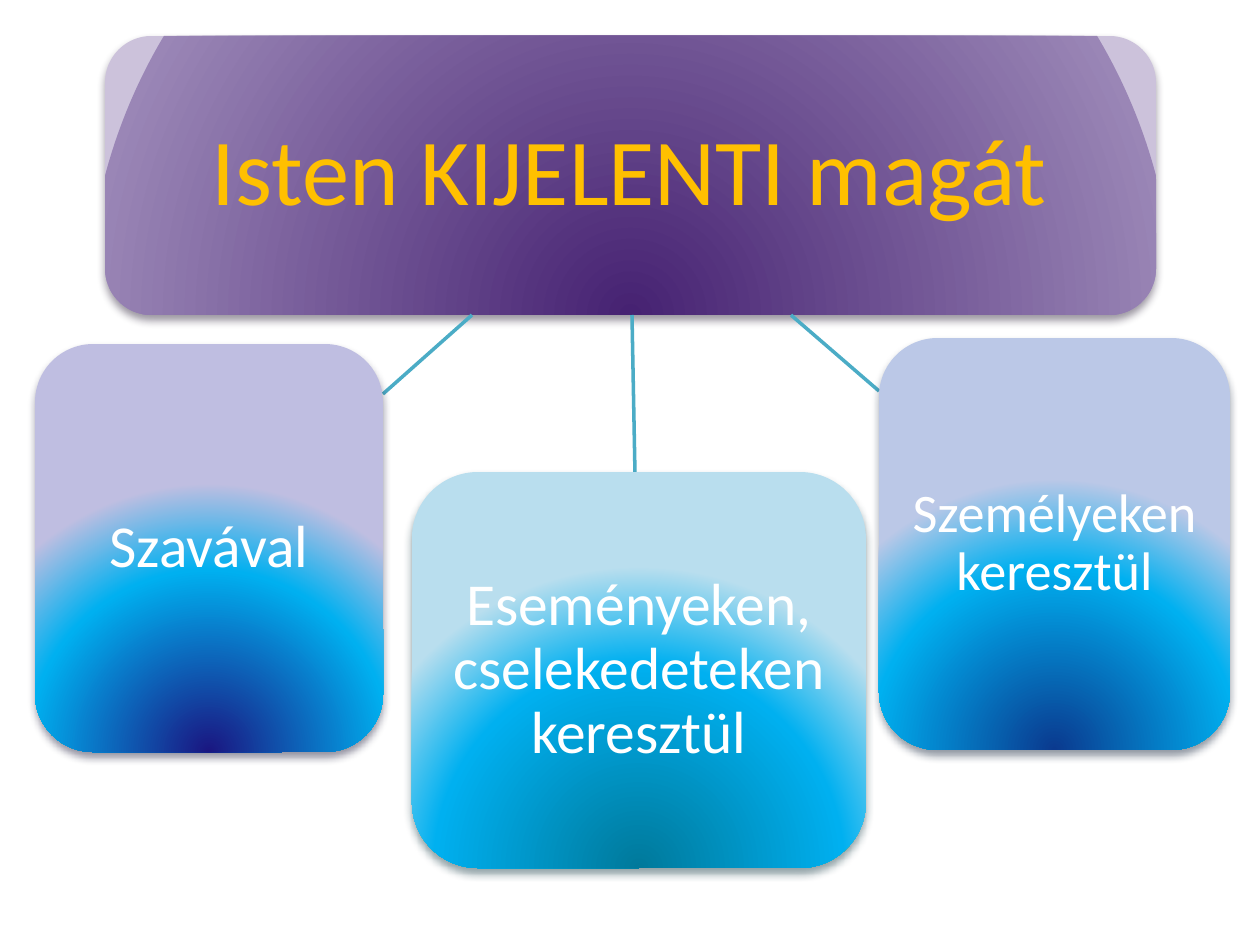
from lxml import etree
from pptx import Presentation, util as u
from pptx.dml.color import RGBColor
from pptx.enum import shapes, text
from pptx.oxml import parse_xml
from pptx.oxml.ns import nsdecls, qn

PX = 914400 / 126
WHITE = RGBColor(0xFF, 0xFF, 0xFF)
GOLD = RGBColor(0xFF, 0xC0, 0x00)
TEAL = RGBColor(0x4B, 0xAC, 0xC6)
SKY = RGBColor(0x00, 0xB0, 0xF0)
PURPLE = RGBColor(0x46, 0x22, 0x72)
MAUVE = RGBColor(0x9A, 0x86, 0xB6)
LILAC = RGBColor(0xCC, 0xC2, 0xDB)
INDIGO = RGBColor(0x1A, 0x16, 0x81)
LAVENDER = RGBColor(0xBF, 0xBE, 0xE1)
NAVY = RGBColor(0x0A, 0x3A, 0x8F)
PERIWINKLE = RGBColor(0xBB, 0xC8, 0xE7)
PETROL = RGBColor(0x00, 0x79, 0x9B)
ICE = RGBColor(0xB9, 0xDE, 0xEE)
BANNER_SHADOW = RGBColor(0x2D, 0x23, 0x39)
INDIGO_SHADOW = RGBColor(0x21, 0x1F, 0x3E)
NAVY_SHADOW = RGBColor(0x1C, 0x2B, 0x42)
PETROL_SHADOW = RGBColor(0x19, 0x3D, 0x47)


def px(*lengths):
    return [u.Emu(round(length * PX)) for length in lengths]


class Diagram:
    font = "Calibri"

    def __init__(self, slide):
        self.slide = slide

    def label(self, shape, words, size, color, inset):
        frame = shape.text_frame
        margin = px(inset)[0]
        layout = dict(word_wrap=True, auto_size=text.MSO_AUTO_SIZE.NONE,
                      vertical_anchor=text.MSO_ANCHOR.MIDDLE,
                      margin_left=margin, margin_right=margin,
                      margin_top=margin, margin_bottom=margin)
        frame.text = words
        line = frame.paragraphs[0]
        paragraph = dict(alignment=text.PP_ALIGN.CENTER, line_spacing=0.9)
        letters = dict(name=self.font, size=u.Pt(size))
        for target, values in ((frame, layout), (line, paragraph),
                               (line.runs[0].font, letters)):
            for key, value in values.items():
                setattr(target, key, value)
        line.runs[0].font.color.rgb = color

    def panel(self, box, stops, shadow):
        """Rounded box with a glow rising from its lower edge."""
        panel = self.slide.shapes.add_shape(
            shapes.MSO_SHAPE.ROUNDED_RECTANGLE, *px(*box))
        panel.line.fill.background()
        panel.shadow.inherit = False
        glow = "".join(f'<a:gs pos="{at * 1000}"><a:srgbClr val="{color}"/></a:gs>'
                       for at, color in stops)
        properties = panel._element.spPr
        properties.find(qn("a:prstGeom")).addnext(parse_xml(
            f'<a:gradFill {nsdecls("a")} rotWithShape="1"><a:gsLst>{glow}</a:gsLst>'
            '<a:path path="circle"><a:fillToRect l="50000" t="130000" '
            'r="50000" b="-30000"/></a:path></a:gradFill>'))
        properties.find(qn("a:effectLst")).append(parse_xml(
            f'<a:outerShdw {nsdecls("a")} blurRad="{u.Pt(4.5)}" dist="{u.Pt(3)}" '
            f'dir="5400000" rotWithShape="0"><a:srgbClr val="{shadow}">'
            '<a:alpha val="48000"/></a:srgbClr></a:outerShdw>'))
        return panel

    def title(self, box, words, size, color):
        title = self.slide.shapes.title
        for side, value in zip(("left", "top", "width", "height"), px(*box)):
            setattr(title, side, value)
        self.label(title, words, size, color, inset=19)
        # Bring the title in front of its banner
        self.slide.shapes._spTree.append(title._element)

    def card(self, box, words, size, core, rim, shadow):
        card = self.panel(box, ((0, core), (68, SKY), (100, rim)), shadow)
        self.label(card, words, size, WHITE, inset=11)

    def link(self, *ends):
        link = self.slide.shapes.add_connector(
            shapes.MSO_CONNECTOR.STRAIGHT, *px(*ends))
        link.line.color.rgb = TEAL
        link.line.width = u.Pt(2)
        etree.SubElement(link._element.spPr, qn("a:effectLst"))


def main():
    deck = Presentation()
    deck.slide_width, deck.slide_height = px(1260, 945)
    diagram = Diagram(deck.slides.add_slide(deck.slide_layouts[5]))

    # Banner with the main statement
    diagram.panel((105, 36, 1051, 279),
                  ((0, PURPLE), (100, MAUVE), (100, LILAC)), BANNER_SHADOW)
    diagram.title((118, 49, 1023, 252), "Isten KIJELENTI magát", 54, GOLD)

    # Links from the banner to the three ways
    banner_bottom = 315
    for start, end, card_edge in ((472, 383, 394), (791, 879, 391), (632, 635, 472)):
        diagram.link(start, banner_bottom, end, card_edge)

    # The three ways
    for way in (
        ((35, 344, 348, 408), "Szavával", 34, INDIGO, LAVENDER, INDIGO_SHADOW),
        ((879, 338, 351, 412), "Személyeken keresztül", 31,
         NAVY, PERIWINKLE, NAVY_SHADOW),
        ((412, 472, 454, 396), "Eseményeken, cselekedeteken keresztül", 34,
         PETROL, ICE, PETROL_SHADOW),
    ):
        diagram.card(*way)

    deck.save("out.pptx")


if __name__ == "__main__":
    main()
